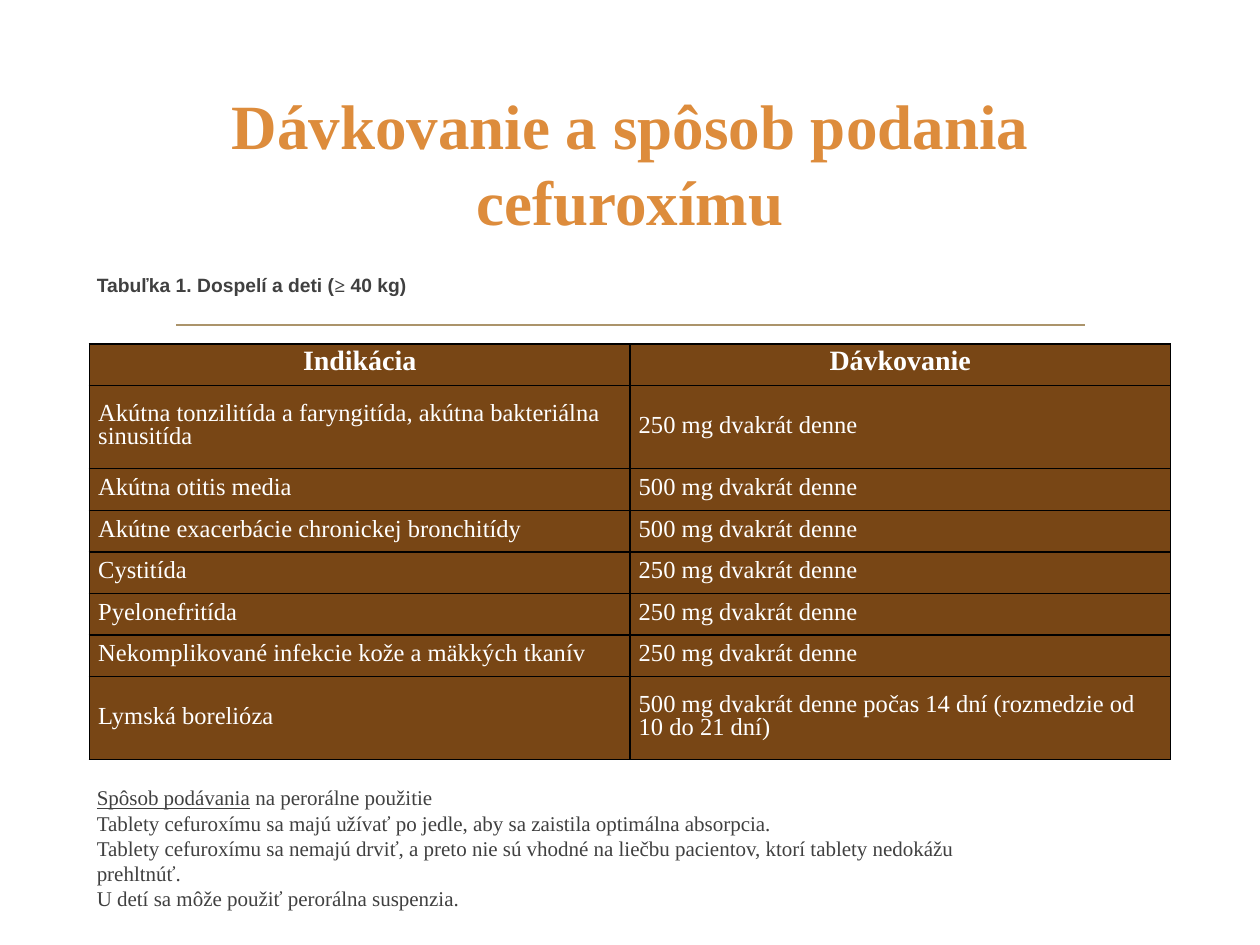
from lxml.etree import SubElement
from pptx import Presentation
from pptx.dml.color import RGBColor
from pptx.enum.shapes import MSO_CONNECTOR
from pptx.enum.text import MSO_ANCHOR, PP_ALIGN
from pptx.oxml.ns import qn
from pptx.util import Inches, Pt

# Content
TITLE = "Dávkovanie a spôsob podania cefuroxímu"
CAPTION = [("Tabuľka 1. Dospelí a deti (", "Arial"), ("≥", "Times New Roman"), (" 40 kg)", "Arial")]
DOSES = [
    ("Indikácia", "Dávkovanie"),
    ("Akútna tonzilitída a faryngitída, akútna bakteriálna sinusitída", "250 mg dvakrát denne"),
    ("Akútna otitis media", "500 mg dvakrát denne"),
    ("Akútne exacerbácie chronickej bronchitídy", "500 mg dvakrát denne"),
    ("Cystitída", "250 mg dvakrát denne"),
    ("Pyelonefritída", "250 mg dvakrát denne"),
    ("Nekomplikované infekcie kože a mäkkých tkanív", "250 mg dvakrát denne"),
    ("Lymská borelióza", "500 mg dvakrát denne počas 14 dní (rozmedzie od 10 do 21 dní)"),
]
NOTES = [
    [("Spôsob podávania", True), (" na perorálne použitie", False)],
    [("Tablety cefuroxímu sa majú užívať po jedle, aby sa zaistila optimálna absorpcia.", False)],
    [("Tablety cefuroxímu sa nemajú drviť, a preto nie sú vhodné na liečbu pacientov, "
      "ktorí tablety nedokážu prehltnúť.", False)],
    [("U detí sa môže použiť perorálna suspenzia.", False)],
]

# Style and layout
SERIF = "Times New Roman"
ORANGE, BROWN, TAN, GREY = "DD8C3C", "784615", "AB946B", "404040"
WHITE, BLACK = "FFFFFF", "000000"
ROW_HEIGHT = 0.33
TALL_ROWS = {1, 7}
TABLE_LEFT, TABLE_TOP, TABLE_WIDTH = 0.71, 2.73, 8.58
TEXT_LEFT = 0.67


def color(value):
    return RGBColor.from_string(value)


def set_font(font, size, value, bold=False, name=SERIF):
    font.name, font.size, font.bold = name, Pt(size), bold
    font.color.rgb = color(value)


def add_text_box(slide, top, width, height):
    box = slide.shapes.add_textbox(Inches(TEXT_LEFT), Inches(top), Inches(width), Inches(height))
    box.text_frame.word_wrap = True
    return box.text_frame


def add_borders(cell):
    properties = cell._tc.get_or_add_tcPr()
    for index, side in enumerate(("a:lnL", "a:lnR", "a:lnT", "a:lnB")):
        line = properties.makeelement(qn(side), {"w": str(Pt(1))})
        fill = SubElement(line, qn("a:solidFill"))
        SubElement(fill, qn("a:srgbClr"), val=BLACK)
        properties.insert(index, line)


presentation = Presentation()
presentation.slide_width, presentation.slide_height = Inches(10), Inches(7.5)
slide = presentation.slides.add_slide(presentation.slide_layouts[5])

# Title
title = slide.shapes.title
title.left, title.top, title.width, title.height = map(Inches, (0.8, 0.54, 8.4, 1.5))
title.text_frame.text = TITLE
title.text_frame.word_wrap = True
title.text_frame.vertical_anchor = MSO_ANCHOR.MIDDLE
paragraph = title.text_frame.paragraphs[0]
paragraph.alignment = PP_ALIGN.CENTER
set_font(paragraph.font, 36, ORANGE, bold=True)

# Rule under the caption
rule = slide.shapes.add_connector(MSO_CONNECTOR.STRAIGHT, *map(Inches, (1.4, 2.58, 8.61, 2.58)))
rule.line.color.rgb = color(TAN)
rule.line.width = Pt(1.25)
SubElement(rule._element.spPr, qn("a:effectLst"))

# Dosage table
heights = [ROW_HEIGHT * (2 if row in TALL_ROWS else 1) for row in range(len(DOSES))]
table = slide.shapes.add_table(
    len(DOSES), 2, Inches(TABLE_LEFT), Inches(TABLE_TOP), Inches(TABLE_WIDTH), Inches(sum(heights))
).table
for row, (texts, height) in enumerate(zip(DOSES, heights)):
    table.rows[row].height = Inches(height)
    header = row == 0
    for column, text in enumerate(texts):
        cell = table.cell(row, column)
        cell.text = text
        cell.vertical_anchor = MSO_ANCHOR.MIDDLE
        cell.margin_left = cell.margin_right = Inches(0.07)
        cell.margin_top = cell.margin_bottom = 0
        cell.fill.solid()
        cell.fill.fore_color.rgb = color(BROWN)
        add_borders(cell)
        paragraph = cell.text_frame.paragraphs[0]
        paragraph.alignment = PP_ALIGN.CENTER if header else PP_ALIGN.LEFT
        paragraph.line_spacing = Pt(13)
        set_font(paragraph.font, 16 if header else 14, WHITE, bold=header)

# Table caption
paragraph = add_text_box(slide, 2.12, 2.68, 0.47).paragraphs[0]
for text, name in CAPTION:
    run = paragraph.add_run()
    run.text = text
    set_font(run.font, 11, GREY, bold=True, name=name)

# Notes on administration
frame = add_text_box(slide, 6.18, 7.6, 1.09)
for index, parts in enumerate(NOTES):
    paragraph = frame.add_paragraph() if index else frame.paragraphs[0]
    set_font(paragraph.font, 12, GREY)
    for text, underlined in parts:
        run = paragraph.add_run()
        run.text = text
        run.font.underline = underlined

presentation.save("out.pptx")
